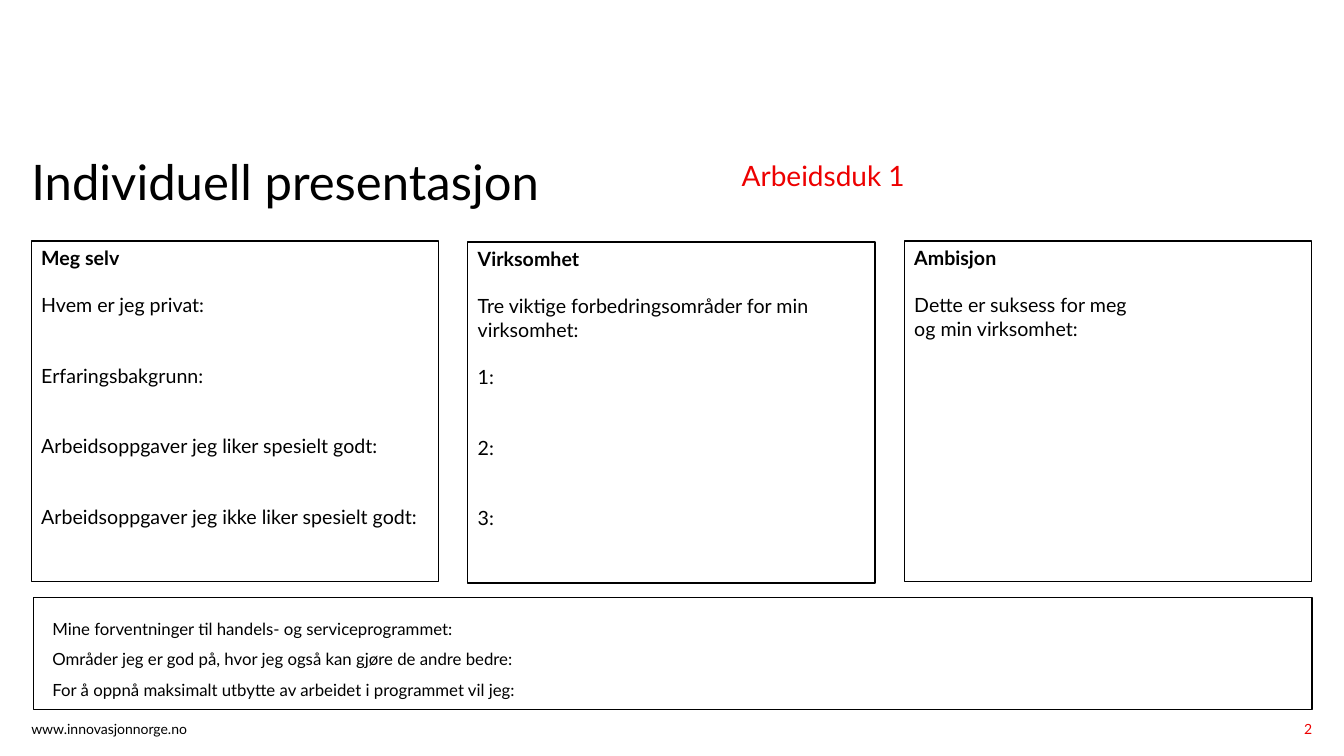
from dataclasses import dataclass

from pptx import Presentation
from pptx.dml.color import RGBColor
from pptx.enum.shapes import MSO_SHAPE
from pptx.enum.text import MSO_ANCHOR, MSO_AUTO_SIZE, PP_ALIGN
from pptx.util import Cm, Pt


@dataclass(frozen=True)
class Theme:
    font: str = "Lato"
    ink: RGBColor = RGBColor(0x00, 0x00, 0x00)
    accent: RGBColor = RGBColor(0xED, 0x00, 0x00)
    title: int = 35
    subtitle: int = 20
    column: int = 14
    expectation: int = 12
    footer: int = 10
    blank_line: float = 16.8  # height of one line of column text, in points


theme = Theme()


def write_text(box, area, lines, size, color=theme.ink, align=PP_ALIGN.LEFT,
               spacing=1.0, inset=(0, 0), bold_first=False):
    """Place box at area (cm) and fill it with (text, blank lines before) pairs."""
    box.left, box.top, box.width, box.height = [Cm(length) for length in area]
    frame = box.text_frame
    frame.word_wrap = True
    frame.auto_size = MSO_AUTO_SIZE.NONE
    frame.vertical_anchor = MSO_ANCHOR.TOP
    frame.margin_left = frame.margin_right = Cm(inset[0])
    frame.margin_top = frame.margin_bottom = Cm(inset[1])
    for index, (text, gap) in enumerate(lines):
        para = frame.add_paragraph() if index else frame.paragraphs[0]
        para.alignment = align
        para.line_spacing = spacing
        para.space_before = Pt(gap * theme.blank_line)
        span = para.add_run()
        span.text = text
        span.font.name = theme.font
        span.font.size = Pt(size)
        span.font.color.rgb = color
        span.font.bold = bold_first and index == 0


def draw_frame(page, area):
    """Draw an empty outlined rectangle at area (cm)."""
    outline = page.shapes.add_shape(MSO_SHAPE.RECTANGLE, *[Cm(length) for length in area])
    outline.shadow.inherit = False
    outline.fill.background()
    outline.line.color.rgb = theme.ink
    outline.line.width = Pt(1)


deck = Presentation()
deck.slide_width, deck.slide_height = Cm(33.87), Cm(19.05)
page = deck.slides.add_slide(deck.slide_layouts[0])
left_edge = 0.79
text_inset = (0.25, 0.13)

# Title and subtitle
write_text(page.shapes.title, (left_edge, 3.99, 13.34, 3.63),
           [("Individuell presentasjon", 0)], theme.title, spacing=0.9)
write_text(page.placeholders[1], (18.69, 4.09, 14.48, 3.58),
           [("Arbeidsduk 1", 0)], theme.subtitle, color=theme.accent, spacing=0.9)

# Three columns: top, text width, text height, lines
columns = [
    (6.07, 10.64, 7.44, [
        ("Meg selv", 0),
        ("Hvem er jeg privat:", 1),
        ("Erfaringsbakgrunn:", 2),
        ("Arbeidsoppgaver jeg liker spesielt godt:", 2),
        ("Arbeidsoppgaver jeg ikke liker spesielt godt:", 2),
    ]),
    (6.1, 10.26, 7.44, [
        ("Virksomhet", 0),
        ("Tre viktige forbedringsområder for min virksomhet:", 1),
        ("1:", 1),
        ("2:", 2),
        ("3:", 2),
    ]),
    (6.07, 10.31, 2.64, [
        ("Ambisjon", 0),
        ("Dette er suksess for meg", 1),
        ("og min virksomhet:", 0),
    ]),
]
column_step = 11
for number, (top, width, height, lines) in enumerate(columns):
    left = left_edge + number * column_step
    draw_frame(page, (left, top, 10.26, 8.59))
    write_text(page.shapes.add_textbox(0, 0, 0, 0), (left, top, width, height), lines,
               theme.column, inset=text_inset, bold_first=True)

# Expectations
expectations = [
    "Mine forventninger til handels- og serviceprogrammet:",
    "Områder jeg er god på, hvor jeg også kan gjøre de andre bedre:",
    "For å oppnå maksimalt utbytte av arbeidet i programmet vil jeg:",
]
draw_frame(page, (0.84, 15.06, 32.23, 2.82))
write_text(page.shapes.add_textbox(0, 0, 0, 0), (1.07, 15.21, 21.46, 2.49),
           [(text, 0) for text in expectations], theme.expectation,
           spacing=1.5, inset=text_inset)

# Footer
write_text(page.shapes.add_textbox(0, 0, 0, 0), (left_edge, 18.16, 7.24, 0.48),
           [("www.innovasjonnorge.no", 0)], theme.footer)
write_text(page.shapes.add_textbox(0, 0, 0, 0), (30.33, 18.16, 2.74, 0.61),
           [("2", 0)], theme.footer, color=theme.accent, align=PP_ALIGN.RIGHT)

deck.save("out.pptx")
